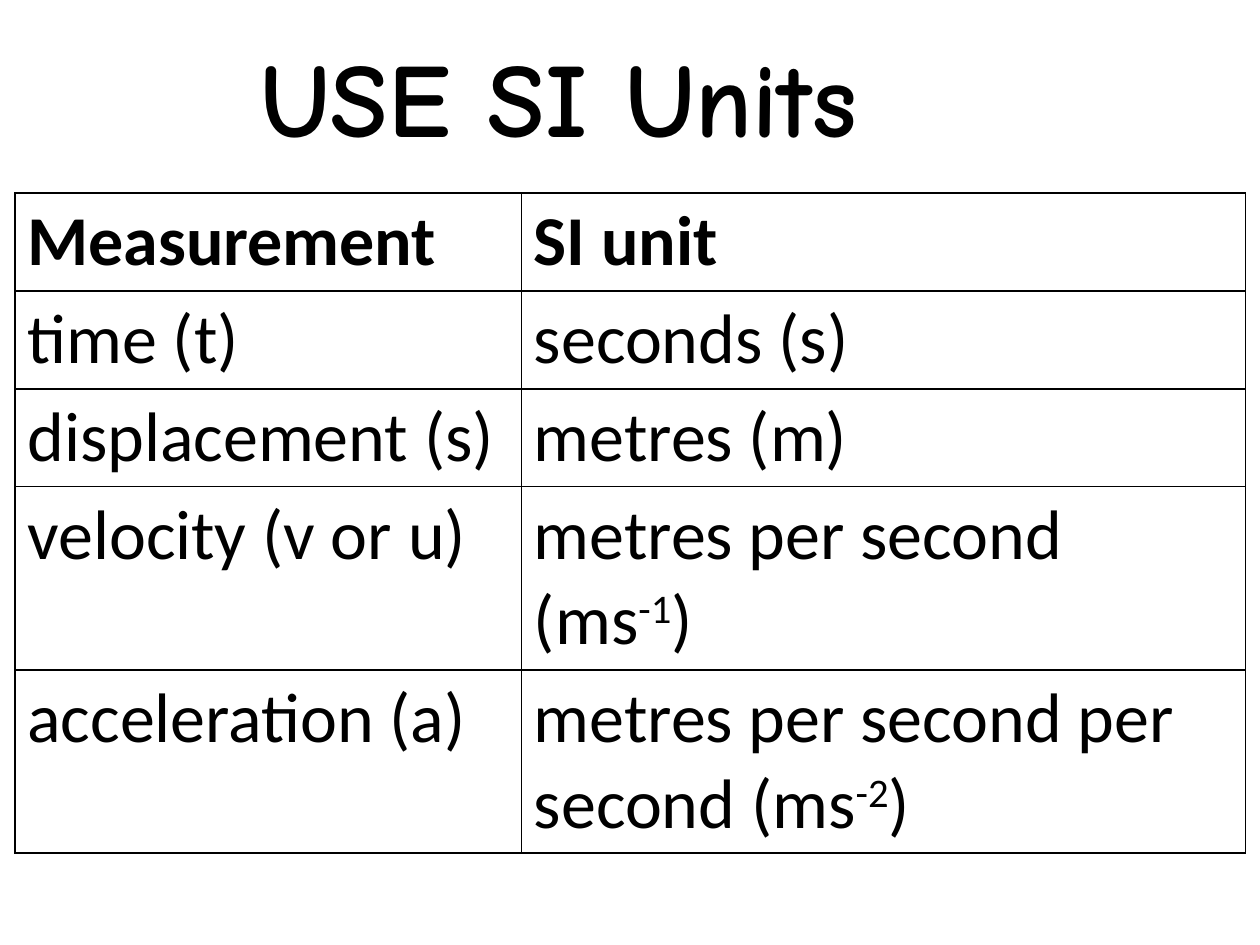
from lxml.etree import SubElement
from pptx import Presentation
from pptx.dml.color import RGBColor
from pptx.enum.text import MSO_ANCHOR, PP_ALIGN
from pptx.oxml.ns import qn
from pptx.util import Cm, Pt

COLORS = {"ink": "000000", "paper": "FFFFFF"}
INK = RGBColor.from_string(COLORS["ink"])
PAPER = RGBColor.from_string(COLORS["paper"])
TITLE_FONT = {"name": "Comic Neue", "size": Pt(60), "bold": True}
HEADER_FONT = {"name": "Calibri", "size": Pt(40), "bold": True}
ENTRY_FONT = {**HEADER_FONT, "bold": False}

UNITS = [
    ("Measurement", [["SI unit"]]),
    ("time (t)", [["seconds (s)"]]),
    ("displacement (s)", [["metres (m)"]]),
    ("velocity (v or u)", [["metres per second"], ["(ms", "-1", ")"]]),
    ("acceleration (a)", [["metres per second per second (ms", "-2", ")"]]),
]
ROW_HEIGHTS = [1.95, 1.95, 1.95, 3.64, 3.64]
COLUMN_WIDTHS = [10.21, 14.6]


def style_font(font, values):
    for attribute, value in values.items():
        setattr(font, attribute, value)
    font.color.rgb = INK


def add_borders(cell):
    properties = cell._tc.get_or_add_tcPr()
    for position, side in enumerate(("lnL", "lnR", "lnT", "lnB")):
        border = SubElement(properties, qn(f"a:{side}"), w=str(Pt(1)))
        fill = SubElement(border, qn("a:solidFill"))
        SubElement(fill, qn("a:srgbClr"), val=COLORS["ink"])
        properties.insert(position, border)


prs = Presentation()
prs.slide_width, prs.slide_height = Cm(25.4), Cm(19.05)
slide = prs.slides.add_slide(prs.slide_layouts[5])

heading = slide.shapes.title
heading.left, heading.top = Cm(5), Cm(0.53)
heading.width, heading.height = Cm(15), Cm(2.82)
heading.text_frame.text = "USE SI Units"
heading.text_frame.vertical_anchor = MSO_ANCHOR.TOP
heading_line = heading.text_frame.paragraphs[0]
heading_line.alignment = PP_ALIGN.LEFT
style_font(heading_line.runs[0].font, TITLE_FONT)

units_table = slide.shapes.add_table(
    len(UNITS), 2, Cm(0.3), Cm(3.89), Cm(sum(COLUMN_WIDTHS)), Cm(sum(ROW_HEIGHTS))
).table
units_table.first_row = units_table.horz_banding = False
for column, width in zip(units_table.columns, COLUMN_WIDTHS):
    column.width = Cm(width)
for row, height in zip(units_table.rows, ROW_HEIGHTS):
    row.height = Cm(height)

for row_index, (measurement, unit_lines) in enumerate(UNITS):
    entry_font = ENTRY_FONT if row_index else HEADER_FONT
    for column_index, lines in enumerate(([[measurement]], unit_lines)):
        cell = units_table.cell(row_index, column_index)
        cell.fill.solid()
        cell.fill.fore_color.rgb = PAPER
        add_borders(cell)
        for line_index, parts in enumerate(lines):
            frame = cell.text_frame
            paragraph = frame.add_paragraph() if line_index else frame.paragraphs[0]
            for part in parts:
                run = paragraph.add_run()
                run.text = part
                style_font(run.font, entry_font)
                if part.startswith("-"):
                    run._r.get_or_add_rPr().set("baseline", "30000")

prs.save("out.pptx")
